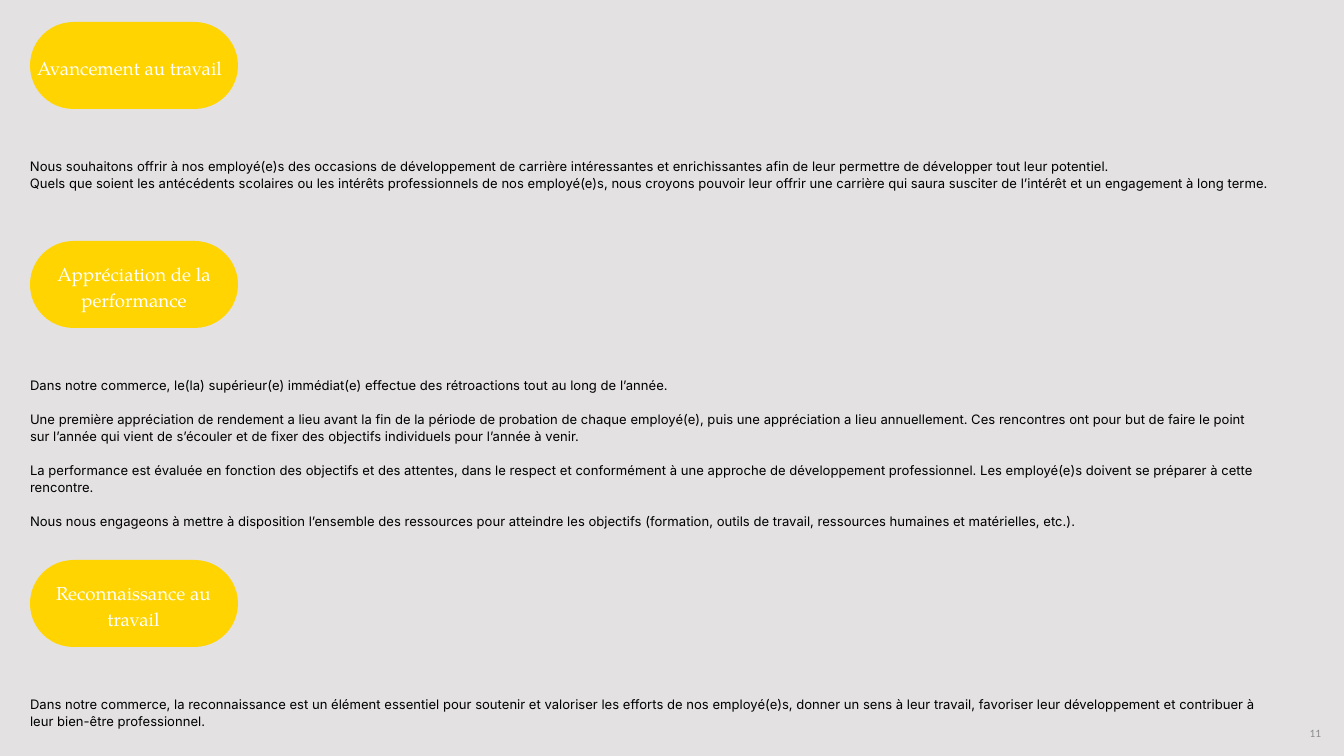
from pptx import Presentation
from pptx import util as u
from pptx.dml.color import RGBColor
from pptx.enum import shapes, text

PX = u.Inches(20) / 1344
BACKGROUND = RGBColor(0xE3, 0xE1, 0xE1)
YELLOW = RGBColor(0xFF, 0xD4, 0x00)
WHITE = RGBColor(0xFF, 0xFF, 0xFF)
BLACK = RGBColor(0x00, 0x00, 0x00)
GREY = RGBColor(0x8C, 0x8C, 0x8C)

LEFT, PILL_WIDTH, PILL_HEIGHT = 30, 208, 87
BODY_OFFSET = 135
HEADING_LINE, BODY_LINE = 28, 18.2

# Pill top, heading, its box width and height, its alignment,
# body width and height, gap between paragraphs in points, paragraphs
SECTIONS = [
    (22, "Avancement au travail", 194, 24, text.PP_ALIGN.LEFT, 1286, 34, 0, [
        "Nous souhaitons offrir à nos employé(e)s des occasions de développement de carrière "
        "intéressantes et enrichissantes afin de leur permettre de développer tout leur potentiel.",
        "Quels que soient les antécédents scolaires ou les intérêts professionnels de nos "
        "employé(e)s, nous croyons pouvoir leur offrir une carrière qui saura susciter de "
        "l’intérêt et un engagement à long terme.",
    ]),
    (241, "Appréciation de la performance", 194, 50, text.PP_ALIGN.CENTER, 1239, 152, BODY_LINE, [
        "Dans notre commerce, le(la) supérieur(e) immédiat(e) effectue des rétroactions tout au "
        "long de l’année.",
        "Une première appréciation de rendement a lieu avant la fin de la période de probation de "
        "chaque employé(e), puis une appréciation a lieu annuellement. Ces rencontres ont pour but "
        "de faire le point sur l’année qui vient de s’écouler et de fixer des objectifs "
        "individuels pour l’année à venir.",
        "La performance est évaluée en fonction des objectifs et des attentes, dans le respect et "
        "conformément à une approche de développement professionnel. Les employé(e)s doivent se "
        "préparer à cette rencontre.",
        "Nous nous engageons à mettre à disposition l’ensemble des ressources pour atteindre les "
        "objectifs (formation, outils de travail, ressources humaines et matérielles, etc.).",
    ]),
    (560, "Reconnaissance au travail", 167, 50, text.PP_ALIGN.CENTER, 1239, 34, 0, [
        "Dans notre commerce, la reconnaissance est un élément essentiel pour soutenir et "
        "valoriser les efforts de nos employé(e)s, donner un sens à leur travail, favoriser leur "
        "développement et contribuer à leur bien-être professionnel.",
    ]),
]


def px(length):
    return u.Emu(round(length * PX))


def write(frame, paragraphs, font, size, color, align=text.PP_ALIGN.LEFT, line=None, gap=0):
    """Fill a text frame; line and gap are in points."""
    for index, content in enumerate(paragraphs):
        paragraph = frame.paragraphs[0] if index == 0 else frame.add_paragraph()
        paragraph.alignment = align
        if line:
            paragraph.line_spacing = u.Pt(line)
        if index and gap:
            paragraph.space_before = u.Pt(gap)
        run = paragraph.add_run()
        run.text = content
        run.font.name = font
        run.font.size = u.Pt(size)
        run.font.color.rgb = color


class Page:
    """Holds the style and the slide being built."""

    heading_style = dict(font="TeX Gyre Pagella", size=20, color=WHITE, line=HEADING_LINE)
    body_style = dict(font="Inter", size=14, color=BLACK, line=BODY_LINE)
    number_style = dict(font="Calibri", size=12, color=GREY, align=text.PP_ALIGN.RIGHT)

    def __init__(self, slide):
        self.slide = slide
        slide.background.fill.solid()
        slide.background.fill.fore_color.rgb = BACKGROUND

    def text_box(self, left, top, width, height, paragraphs,
                 anchor=text.MSO_ANCHOR.TOP, **style):
        box = self.slide.shapes.add_textbox(px(left), px(top), px(width), px(height))
        frame = box.text_frame
        frame.word_wrap = True
        frame.vertical_anchor = anchor
        frame.margin_top = frame.margin_bottom = 0
        frame.margin_left = frame.margin_right = 0
        write(frame, paragraphs, **style)

    def pill(self, top):
        pill = self.slide.shapes.add_shape(
            shapes.MSO_SHAPE.ROUNDED_RECTANGLE,
            px(LEFT), px(top), px(PILL_WIDTH), px(PILL_HEIGHT))
        pill.adjustments[0] = 0.5
        pill.shadow.inherit = False
        pill.fill.solid()
        pill.fill.fore_color.rgb = YELLOW
        pill.line.fill.background()

    def heading(self, pill_top, content, width, height, align):
        """Place a heading in the middle of its pill."""
        left = LEFT + (PILL_WIDTH - width) // 2
        top = pill_top + (PILL_HEIGHT - height) // 2
        self.text_box(left, top, width, height, [content], align=align, **self.heading_style)

    def body(self, top, width, height, paragraphs, gap):
        self.text_box(LEFT, top, width, height, paragraphs, gap=gap, **self.body_style)

    def page_number(self, number):
        self.text_box(1171, 720, 150, 27, [number],
                      anchor=text.MSO_ANCHOR.MIDDLE, **self.number_style)


def main():
    deck = Presentation()
    deck.slide_width, deck.slide_height = px(1344), px(756)
    page = Page(deck.slides.add_slide(deck.slide_layouts[6]))
    for (top, heading, heading_width, heading_height, align,
         body_width, body_height, gap, paragraphs) in SECTIONS:
        page.pill(top)
        page.heading(top, heading, heading_width, heading_height, align)
        page.body(top + BODY_OFFSET, body_width, body_height, paragraphs, gap)
    page.page_number("11")
    deck.save("out.pptx")


if __name__ == "__main__":
    main()
